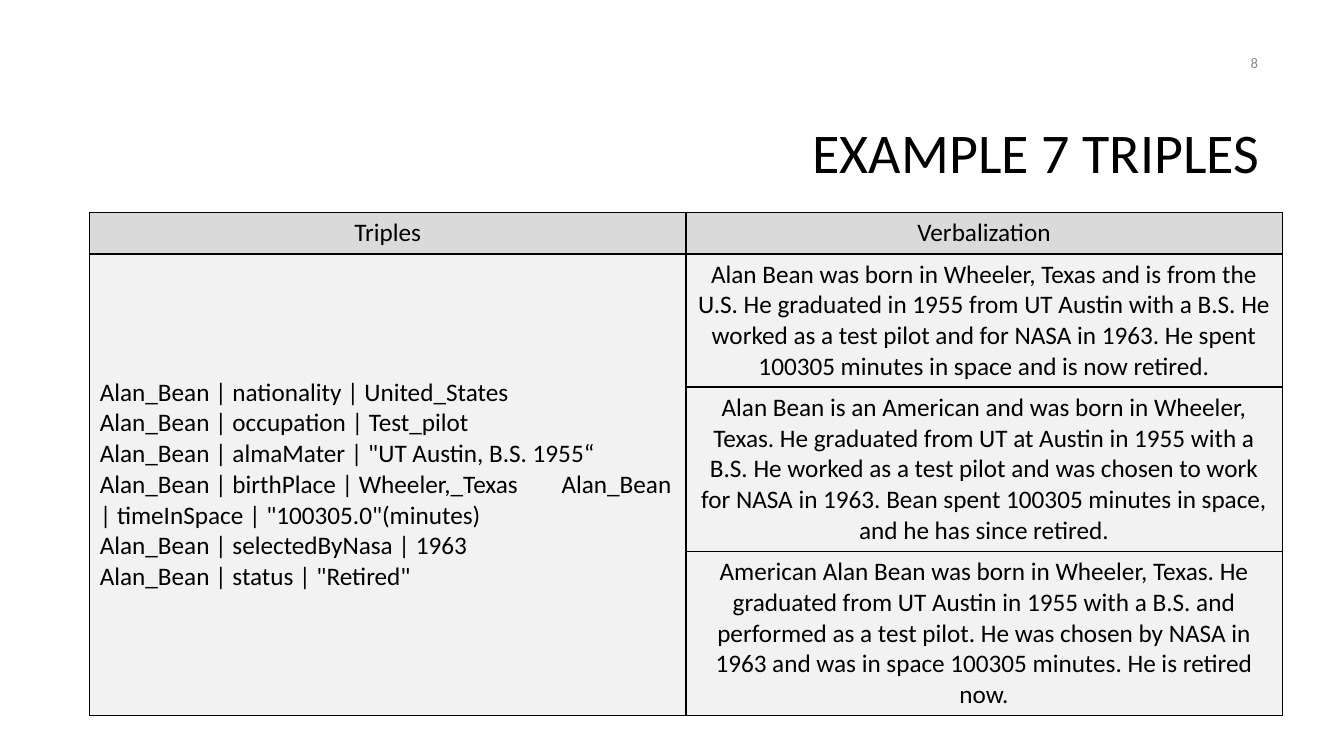
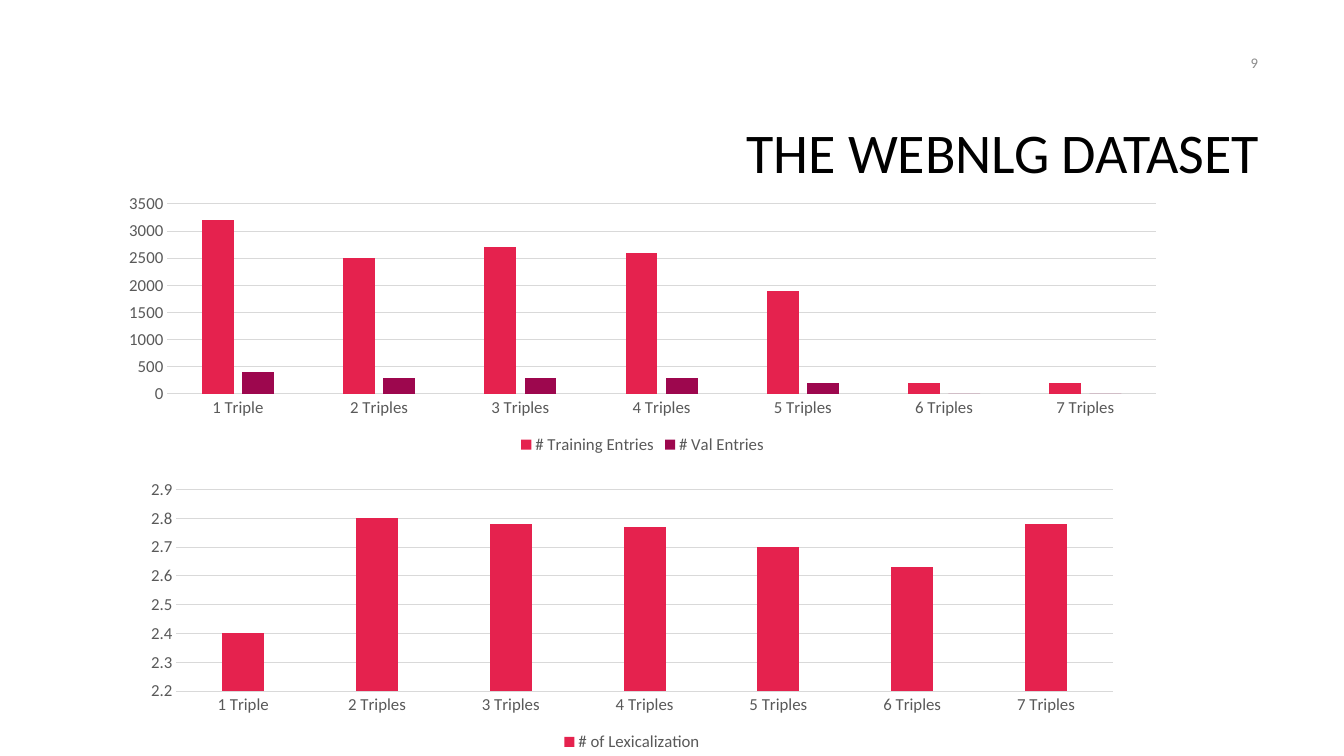
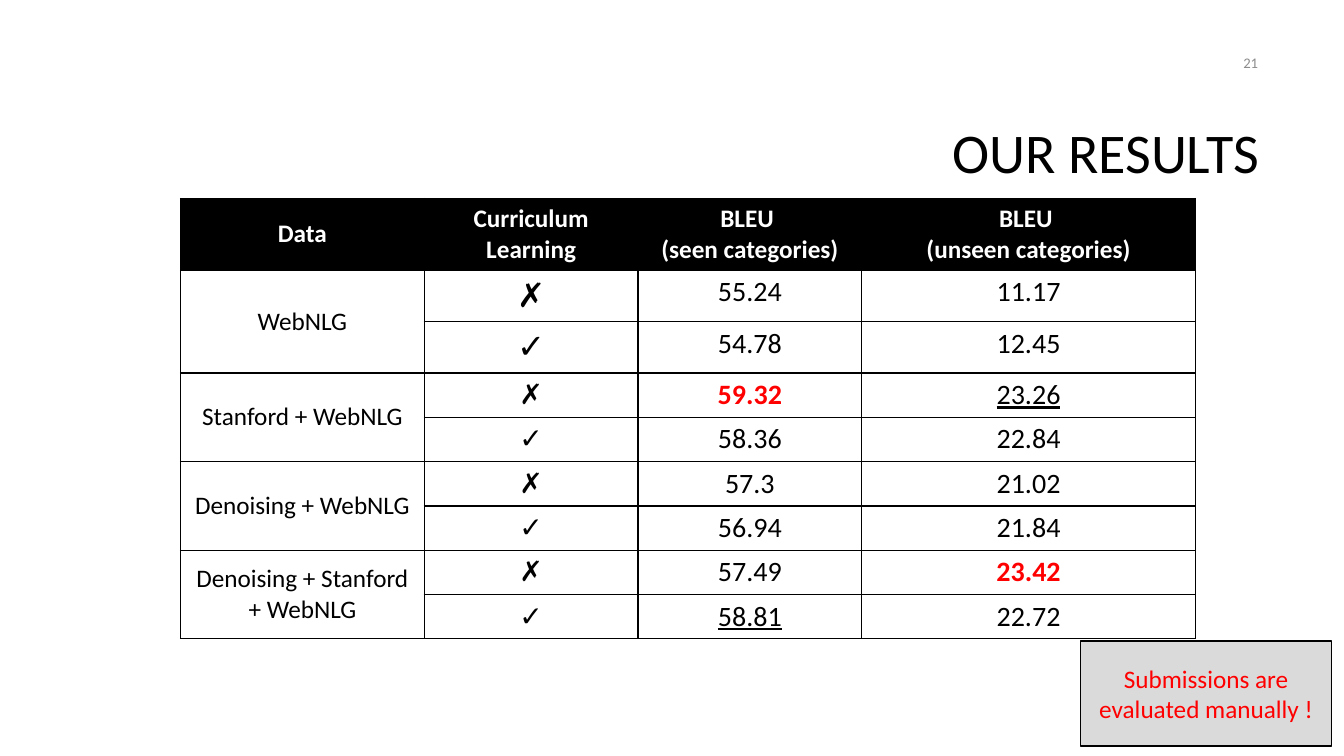
from dataclasses import dataclass

from lxml import etree
from pptx import Presentation
from pptx.chart.data import CategoryChartData
from pptx.dml.color import RGBColor
from pptx.enum.chart import XL_CHART_TYPE, XL_LEGEND_POSITION, XL_TICK_MARK
from pptx.enum.shapes import MSO_SHAPE
from pptx.enum.text import MSO_ANCHOR, PP_ALIGN
from pptx.oxml.ns import qn
from pptx.util import Inches, Pt

LEFT, CENTER, RIGHT = PP_ALIGN.LEFT, PP_ALIGN.CENTER, PP_ALIGN.RIGHT
TOP, MIDDLE = MSO_ANCHOR.TOP, MSO_ANCHOR.MIDDLE
COLUMNS = XL_CHART_TYPE.COLUMN_CLUSTERED
LEGEND_BELOW = XL_LEGEND_POSITION.BOTTOM
NO_TICKS = XL_TICK_MARK.NONE
RECTANGLE = MSO_SHAPE.RECTANGLE

SLIDE_WIDTH, SLIDE_HEIGHT = Inches(13.33), Inches(7.5)
GRID_COLUMNS, GRID_ROWS = 40, 30


@dataclass(frozen=True)
class Theme:
    font: str = "Calibri"
    black: str = "000000"
    white: str = "FFFFFF"
    red: str = "FF0000"
    number_gray: str = "8C8C8C"
    header_gray: str = "DADADA"
    cell_gray: str = "F2F2F2"
    axis_text: str = "595959"
    grid_line: str = "D9D9D9"
    series: tuple = ("E5224E", "9D074E")
    title_size: float = 40
    mark_size: float = 24
    score_size: float = 20
    body_size: float = 18
    chart_size: float = 12
    number_size: float = 10.5
    border: float = 1
    hairline: float = 0.75


THEME = Theme()


@dataclass(frozen=True)
class Box:
    """A region in columns and rows of the slide grid."""
    column: float
    row: float
    columns: float
    rows: float

    def lengths(self):
        across, down = SLIDE_WIDTH / GRID_COLUMNS, SLIDE_HEIGHT / GRID_ROWS
        return (round(self.column * across), round(self.row * down),
                round(self.columns * across), round(self.rows * down))


TITLE_BOX = Box(9.51, 3.36, 28.26, 5.64)
NUMBER_BOX = Box(28.74, 1.68, 9, 1.6)

TRIPLES = [
    "Alan_Bean | nationality | United_States",
    "Alan_Bean | occupation | Test_pilot",
    'Alan_Bean | almaMater | "UT Austin, B.S. 1955“',
    'Alan_Bean | birthPlace | Wheeler,_Texas\tAlan_Bean | timeInSpace | "100305.0"(minutes)',
    "Alan_Bean | selectedByNasa | 1963",
    'Alan_Bean | status | "Retired"',
]
VERBALIZATIONS = [
    "Alan Bean was born in Wheeler, Texas and is from the U.S. He graduated in 1955 "
    "from UT Austin with a B.S. He worked as a test pilot and for NASA in 1963. "
    "He spent 100305 minutes in space and is now retired.",
    "Alan Bean is an American and was born in Wheeler, Texas. He graduated from UT at "
    "Austin in 1955 with a B.S. He worked as a test pilot and was chosen to work for "
    "NASA in 1963. Bean spent 100305 minutes in space, and he has since retired.",
    "American Alan Bean was born in Wheeler, Texas. He graduated from UT Austin in 1955 "
    "with a B.S. and performed as a test pilot. He was chosen by NASA in 1963 and was "
    "in space 100305 minutes. He is retired now.",
]

TRIPLE_COUNTS = ["1 Triple"] + [f"{count} Triples" for count in range(2, 8)]
ENTRY_SERIES = {
    "# Training Entries": [3200, 2500, 2700, 2600, 1900, 200, 200],
    "# Val Entries": [400, 300, 300, 300, 200, 0, 0],
}
LEXICAL_SERIES = {"# of Lexicalization": [2.4, 2.8, 2.78, 2.77, 2.7, 2.63, 2.78]}

RESULT_HEADERS = ["Data", "Curriculum Learning", "BLEU \n(seen categories)",
                  "BLEU \n(unseen categories)"]
# Each data set has one pair of scores without and one with curriculum learning.
RESULTS = [
    ("WebNLG", [("55.24", "11.17"), ("54.78", "12.45")]),
    ("Stanford + WebNLG", [("59.32", "23.26"), ("58.36", "22.84")]),
    ("Denoising + WebNLG", [("57.3", "21.02"), ("56.94", "21.84")]),
    ("Denoising + Stanford + WebNLG", [("57.49", "23.42"), ("58.81", "22.72")]),
]
BEST_SCORES = {"59.32", "23.42"}
SECOND_SCORES = {"23.26", "58.81"}


def rgb(color):
    return RGBColor.from_string(color)


def style_font(font, size, color, bold=False, underline=False):
    font.name = THEME.font
    font.size = Pt(size)
    font.color.rgb = rgb(color)
    font.bold = bold
    font.underline = underline


def write(frame, text, size=THEME.body_size, color=THEME.black, align=CENTER, **emphasis):
    frame.text = text
    for para in frame.paragraphs:
        para.alignment = align
        for span in para.runs:
            style_font(span.font, size, color, **emphasis)


def add_label(page, box, text, size, color):
    label = page.shapes.add_textbox(*box.lengths())
    frame = label.text_frame
    frame.word_wrap = True
    frame.vertical_anchor = MIDDLE
    write(frame, text, size, color, RIGHT)
    return frame


def add_page(deck, title, number):
    page = deck.slides.add_slide(deck.slide_layouts[6])
    heading = add_label(page, TITLE_BOX, title, THEME.title_size, THEME.black)
    heading.paragraphs[0].line_spacing = 0.9
    add_label(page, NUMBER_BOX, str(number), THEME.number_size, THEME.number_gray)
    return page


def outline_cell(cell):
    properties = cell._tc.get_or_add_tcPr()
    for position, side in enumerate(("lnL", "lnR", "lnT", "lnB")):
        line = etree.Element(qn(f"a:{side}"), w=str(Pt(THEME.border)))
        paint = etree.SubElement(line, qn("a:solidFill"))
        etree.SubElement(paint, qn("a:srgbClr"), val=THEME.black)
        properties.insert(position, line)


def add_grid_table(page, box, column_shares, row_shares, header_fill, body_fill):
    """Add an empty outlined table whose tracks share the box in proportion."""
    left, top, width, height = box.lengths()
    table = page.shapes.add_table(len(row_shares), len(column_shares),
                                  left, top, width, height).table
    table.first_row = table.horz_banding = False
    for column, share in zip(table.columns, column_shares):
        column.width = round(width * share / sum(column_shares))
    for index, (row, share) in enumerate(zip(table.rows, row_shares)):
        row.height = round(height * share / sum(row_shares))
        for cell in row.cells:
            cell.fill.solid()
            cell.fill.fore_color.rgb = rgb(body_fill if index else header_fill)
            outline_cell(cell)
    return table


def fill_cell(cell, text, anchor=MIDDLE, **style):
    cell.vertical_anchor = anchor
    write(cell.text_frame, text, **style)


def add_triples_table(page, box):
    table = add_grid_table(page, box, [1, 1], [0.41, 1.32, 1.63, 1.63],
                           THEME.header_gray, THEME.cell_gray)
    for column, heading in enumerate(("Triples", "Verbalization")):
        fill_cell(table.cell(0, column), heading)
    triples = table.cell(1, 0)
    triples.merge(table.cell(3, 0))
    fill_cell(triples, "\n".join(TRIPLES), align=LEFT)
    for para in triples.text_frame.paragraphs:
        if "\t" in para.text:
            stops = etree.SubElement(para._p.get_or_add_pPr(), qn("a:tabLst"))
            etree.SubElement(stops, qn("a:tab"), pos=str(Inches(4.58)), algn="l")
    for row, sentence in enumerate(VERBALIZATIONS, start=1):
        fill_cell(table.cell(row, 1), sentence)


def add_results_table(page, box):
    table = add_grid_table(page, box, [2.42, 2.12, 2.22, 3.31],
                           [0.71] + [0.51] * 2 + [0.44] * 6, THEME.black, THEME.white)
    for column, heading in enumerate(RESULT_HEADERS):
        fill_cell(table.cell(0, column), heading, color=THEME.white, bold=True)
    for group, (data, score_pairs) in enumerate(RESULTS):
        first = 1 + 2 * group
        name = table.cell(first, 0)
        name.merge(table.cell(first + 1, 0))
        fill_cell(name, data)
        mark_size = THEME.score_size if group else THEME.mark_size
        for row, (mark, scores) in enumerate(zip("✗✓", score_pairs), start=first):
            fill_cell(table.cell(row, 1), mark, TOP, size=mark_size)
            for column, score in enumerate(scores, start=2):
                best = score in BEST_SCORES
                fill_cell(table.cell(row, column), score, TOP, size=THEME.score_size,
                          color=THEME.red if best else THEME.black,
                          bold=best, underline=score in SECOND_SCORES)


def add_column_chart(page, box, series, scale, number_format):
    """Add a clustered column chart; scale is (minimum, maximum, step)."""
    data = CategoryChartData()
    data.categories = TRIPLE_COUNTS
    for name, values in series.items():
        data.add_series(name, values)
    chart = page.shapes.add_chart(COLUMNS, *box.lengths(), data).chart
    style_font(chart.font, THEME.chart_size, THEME.axis_text)
    chart.has_title = False
    chart.has_legend = True
    chart.legend.position = LEGEND_BELOW
    chart.legend.include_in_layout = False

    plot = chart.plots[0]
    plot.gap_width, plot.overlap = 219, -27
    plot.vary_by_categories = False
    for bars, color in zip(plot.series, THEME.series):
        bars.format.fill.solid()
        bars.format.fill.fore_color.rgb = rgb(color)

    categories, values = chart.category_axis, chart.value_axis
    for axis in (categories, values):
        axis.major_tick_mark = axis.minor_tick_mark = NO_TICKS
    values.minimum_scale, values.maximum_scale, values.major_unit = scale
    values.tick_labels.number_format = number_format
    values.tick_labels.number_format_is_linked = False
    values.format.line.fill.background()
    for line in (categories.format.line, values.major_gridlines.format.line):
        line.color.rgb = rgb(THEME.grid_line)
        line.width = Pt(THEME.hairline)


def add_note(page, box, text):
    note = page.shapes.add_shape(RECTANGLE, *box.lengths())
    note.shadow.inherit = False
    note.fill.solid()
    note.fill.fore_color.rgb = rgb(THEME.header_gray)
    note.line.color.rgb = rgb(THEME.black)
    note.line.width = Pt(THEME.border)
    note.text_frame.word_wrap = True
    note.text_frame.vertical_anchor = MIDDLE
    write(note.text_frame, text, color=THEME.red)


def main():
    deck = Presentation()
    deck.slide_width, deck.slide_height = SLIDE_WIDTH, SLIDE_HEIGHT

    example = add_page(deck, "EXAMPLE 7 TRIPLES", 8)
    add_triples_table(example, Box(2.67, 8.44, 35.49, 19.96))

    dataset = add_page(deck, "THE WEBNLG DATASET", 9)
    add_column_chart(dataset, Box(3.21, 7.48, 31.83, 10.72), ENTRY_SERIES,
                     (0, 3500, 500), "General")
    add_column_chart(dataset, Box(3.9, 18.8, 29.82, 11.2), LEXICAL_SERIES,
                     (2.2, 2.9, 0.1), "0.0")

    results = add_page(deck, "OUR RESULTS", 21)
    add_note(results, Box(32.16, 25.44, 7.47, 4.16), "Submissions are evaluated manually !")
    add_results_table(results, Box(5.37, 7.88, 30.21, 17.48))

    deck.save("out.pptx")


if __name__ == "__main__":
    main()
